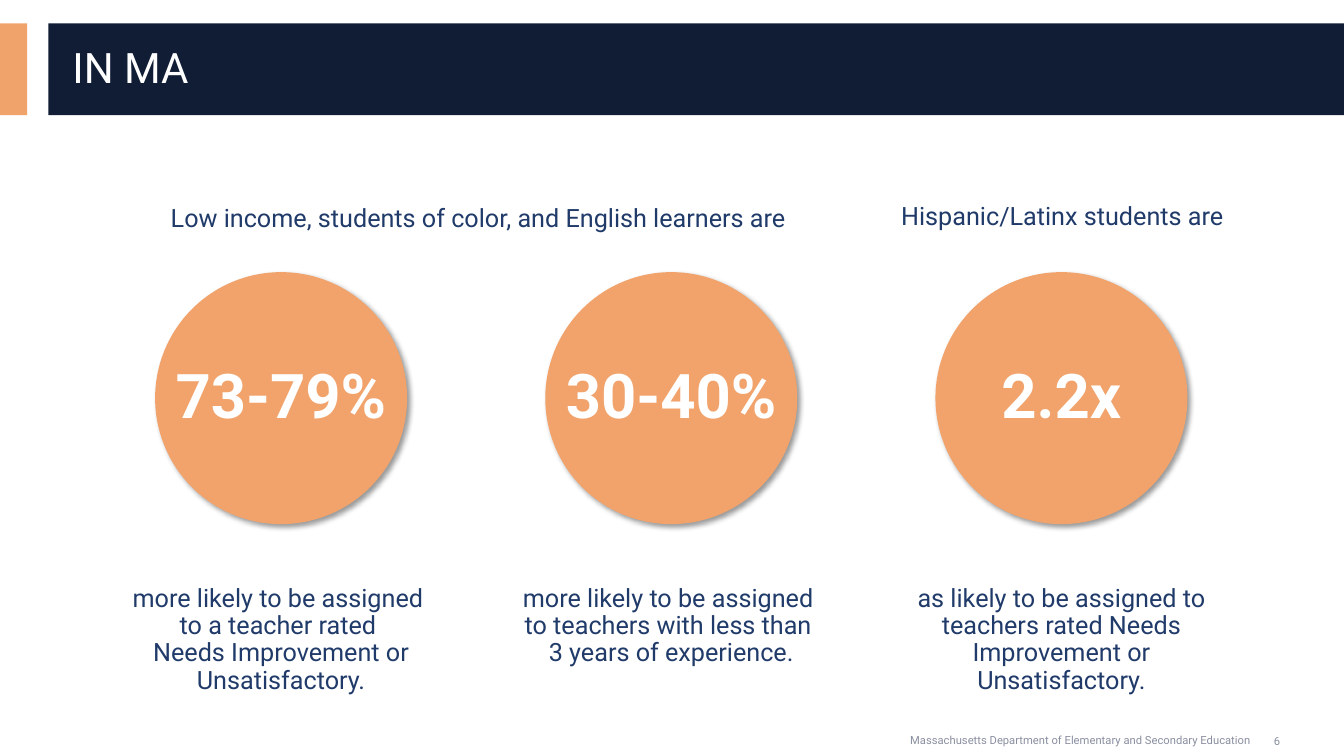
from lxml.etree import SubElement
from pptx import Presentation
from pptx.dml.color import RGBColor
from pptx.enum.shapes import MSO_SHAPE
from pptx.enum.text import MSO_ANCHOR, PP_ALIGN
from pptx.oxml.ns import qn
from pptx.util import Pt

ORANGE = RGBColor(0xF0, 0xA3, 0x6B)
CIRCLE_ORANGE = RGBColor(0xF1, 0xA3, 0x6B)
NAVY = RGBColor(0x10, 0x1D, 0x34)
BLUE = RGBColor(0x20, 0x3B, 0x6A)
GREY = RGBColor(0x8A, 0x8F, 0xA0)
WHITE = RGBColor(0xFF, 0xFF, 0xFF)


class Deck:
    """Draws styled elements on the current slide, with lengths in points."""

    font = "Roboto"

    def __init__(self, width, height):
        self.prs = Presentation()
        self.prs.slide_width, self.prs.slide_height = Pt(width), Pt(height)
        self.s = self.prs.slides.add_slide(self.prs.slide_layouts[6])

    def shape(self, kind, x, y, w, h, fill):
        sp = self.s.shapes.add_shape(kind, Pt(x), Pt(y), Pt(w), Pt(h))
        sp.shadow.inherit = False
        sp.fill.solid()
        sp.fill.fore_color.rgb = fill
        sp.line.fill.background()
        return sp

    def bar(self, x, y, w, h, fill):
        return self.shape(MSO_SHAPE.RECTANGLE, x, y, w, h, fill)

    def circle(self, x, y, size, fill):
        sp = self.shape(MSO_SHAPE.OVAL, x, y, size, size, fill)
        effects = sp.element.spPr.find(qn("a:effectLst"))
        shadow = SubElement(effects, qn("a:outerShdw"), blurRad=str(Pt(4)),
                            dist=str(Pt(3)), dir=str(45 * 60000), algn="tl", rotWithShape="0")
        black = SubElement(shadow, qn("a:srgbClr"), val="000000")
        SubElement(black, qn("a:alpha"), val="40000")
        return sp

    def text(self, x, y, w, h, text, size, color, bold=False, spacing=1.0,
             align=PP_ALIGN.CENTER, anchor=MSO_ANCHOR.TOP):
        sp = self.s.shapes.add_textbox(Pt(x), Pt(y), Pt(w), Pt(h))
        tf = sp.text_frame
        tf.word_wrap = True
        tf.vertical_anchor = anchor
        p = tf.paragraphs[0]
        p.text = text
        p.alignment = align
        p.line_spacing = spacing
        for r in p.runs:
            r.font.name = self.font
            r.font.size = Pt(size)
            r.font.bold = bold
            r.font.color.rgb = color
        return sp


def main():
    deck = Deck(960, 540)
    deck.bar(0, 16.75, 19.5, 65.5, ORANGE)
    deck.bar(34.5, 16.75, 925.5, 65.5, NAVY)
    deck.text(44.64, 23, 895.7, 53.3, "IN MA", 30, WHITE, spacing=0.9,
              align=PP_ALIGN.LEFT, anchor=MSO_ANCHOR.MIDDLE)
    deck.text(643, 520.5, 287.3, 17.3,
              "Massachusetts Department of Elementary and Secondary Education",
              8, GREY, align=PP_ALIGN.LEFT)
    deck.text(894.2, 514.8, 36, 28.8, "6", 8, GREY, anchor=MSO_ANCHOR.MIDDLE)

    deck.text(113.8, 143.3, 455.8, 47.5,
              "Low income, students of color, and English learners are", 18, BLUE, spacing=0.9)
    deck.text(630.7, 141.8, 256.3, 36.7, "Hispanic/Latinx students are", 18, BLUE, spacing=0.9)

    findings = [
        ("73-79%", "more likely to be assigned \nto a teacher rated \n"
                   "Needs Improvement or Unsatisfactory."),
        ("30-40%", "more likely to be assigned \nto teachers with less than \n"
                   "3 years of experience."),
        ("2.2x", "as likely to be assigned to teachers rated Needs Improvement "
                 "or Unsatisfactory."),
    ]
    first_center, pitch = 200.8, 278.7
    diameter, figure_width, caption_width = 180, 208, 248.4
    for i, (figure, caption) in enumerate(findings):
        center = first_center + i * pitch
        deck.circle(center - diameter / 2, 194.4, diameter, CIRCLE_ORANGE)
        deck.text(center - figure_width / 2, 251.4, figure_width, 60.5, figure, 44, WHITE, bold=True)
        deck.text(center - caption_width / 2, 414.7, caption_width, 92.2, caption, 18, BLUE, spacing=0.9)

    deck.prs.save("out.pptx")


if __name__ == "__main__":
    main()
